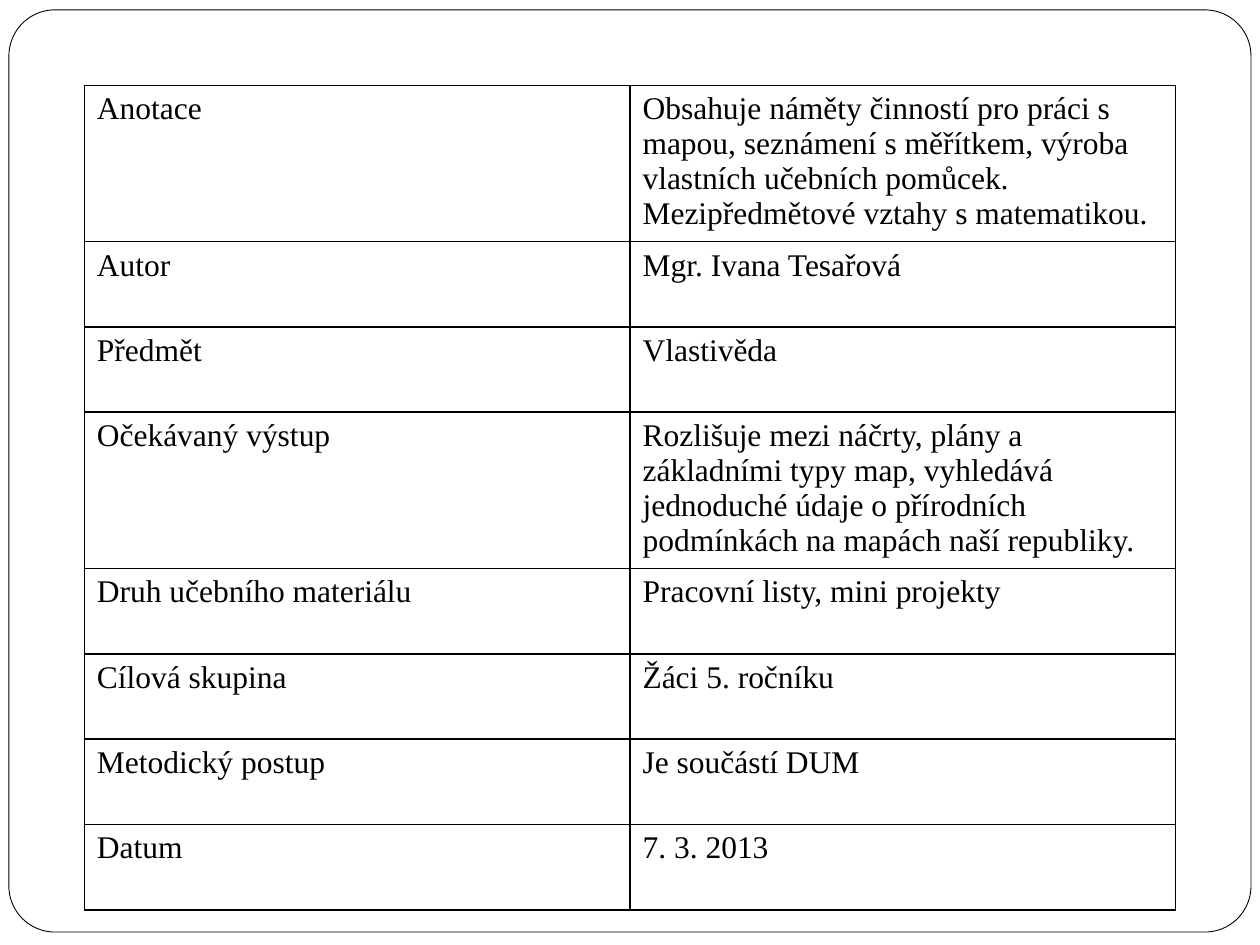
"""Build a lesson information slide with a framed two-column table."""
import pptx
import pptx.dml.color
import pptx.enum.shapes
import pptx.oxml
import pptx.util
from pptx.util import Cm

COLOURS = {"paper": "FFFFFF", "ink": "000000"}
FONT = "Times New Roman"
SHORT_ROW, TALL_ROW = Cm(1.72), Cm(3.15)
LESSON_ROWS = [
    ("Anotace", "Obsahuje náměty činností pro práci s mapou, seznámení s měřítkem, "
     "výroba vlastních učebních pomůcek. Mezipředmětové vztahy s matematikou.", TALL_ROW),
    ("Autor", "Mgr. Ivana Tesařová", SHORT_ROW),
    ("Předmět", "Vlastivěda", SHORT_ROW),
    ("Očekávaný výstup", "Rozlišuje mezi náčrty, plány a základními typy map, vyhledává "
     "jednoduché údaje o přírodních podmínkách na mapách naší republiky.", TALL_ROW),
    ("Druh učebního materiálu", "Pracovní listy, mini projekty", SHORT_ROW),
    ("Cílová skupina", "Žáci 5. ročníku", SHORT_ROW),
    ("Metodický postup", "Je součástí DUM", SHORT_ROW),
    ("Datum", "7. 3. 2013", SHORT_ROW),
]


def colour(name):
    return pptx.dml.color.RGBColor.from_string(COLOURS[name])


def add_frame(page):
    frame = page.shapes.add_shape(
        pptx.enum.shapes.MSO_SHAPE.ROUNDED_RECTANGLE,
        Cm(0.18), Cm(0.2), Cm(25.04), Cm(18.59))
    frame.adjustments[0] = 0.05
    frame.shadow.inherit = False
    frame.fill.solid()
    frame.fill.fore_color.rgb = colour("paper")
    frame.line.color.rgb = colour("ink")
    frame.line.width = pptx.util.Pt(0.5)


def add_borders(cell):
    properties = cell._tc.get_or_add_tcPr()
    for position, side in enumerate(("lnL", "lnR", "lnT", "lnB")):
        border = pptx.oxml.parse_xml(
            f'<a:{side} xmlns:a="http://schemas.openxmlformats.org/drawingml/2006/main" '
            f'w="{pptx.util.Pt(1)}"><a:solidFill><a:srgbClr val="{COLOURS["ink"]}"/>'
            f'</a:solidFill></a:{side}>')
        properties.insert(position, border)


def fill_cell(cell, text):
    cell.text_frame.text = text
    font = cell.text_frame.paragraphs[0].runs[0].font
    font.name = FONT
    font.size = pptx.util.Pt(18)
    font.bold = False
    font.color.rgb = colour("ink")
    cell.fill.background()
    add_borders(cell)


def add_lesson_table(page):
    height = sum(row_height for _, _, row_height in LESSON_ROWS)
    table = page.shapes.add_table(
        len(LESSON_ROWS), 2, Cm(1.7), Cm(1.72), Cm(22), height).table
    table.first_row = False
    table.horz_banding = False
    for row, (label, content, row_height) in zip(table.rows, LESSON_ROWS):
        row.height = row_height
        for cell, text in zip(row.cells, (label, content)):
            fill_cell(cell, text)


def main():
    deck = pptx.Presentation()
    deck.slide_width, deck.slide_height = Cm(25.4), Cm(19.05)
    page = deck.slides.add_slide(deck.slide_layouts[6])
    add_frame(page)
    add_lesson_table(page)
    deck.save("out.pptx")


if __name__ == "__main__":
    main()
